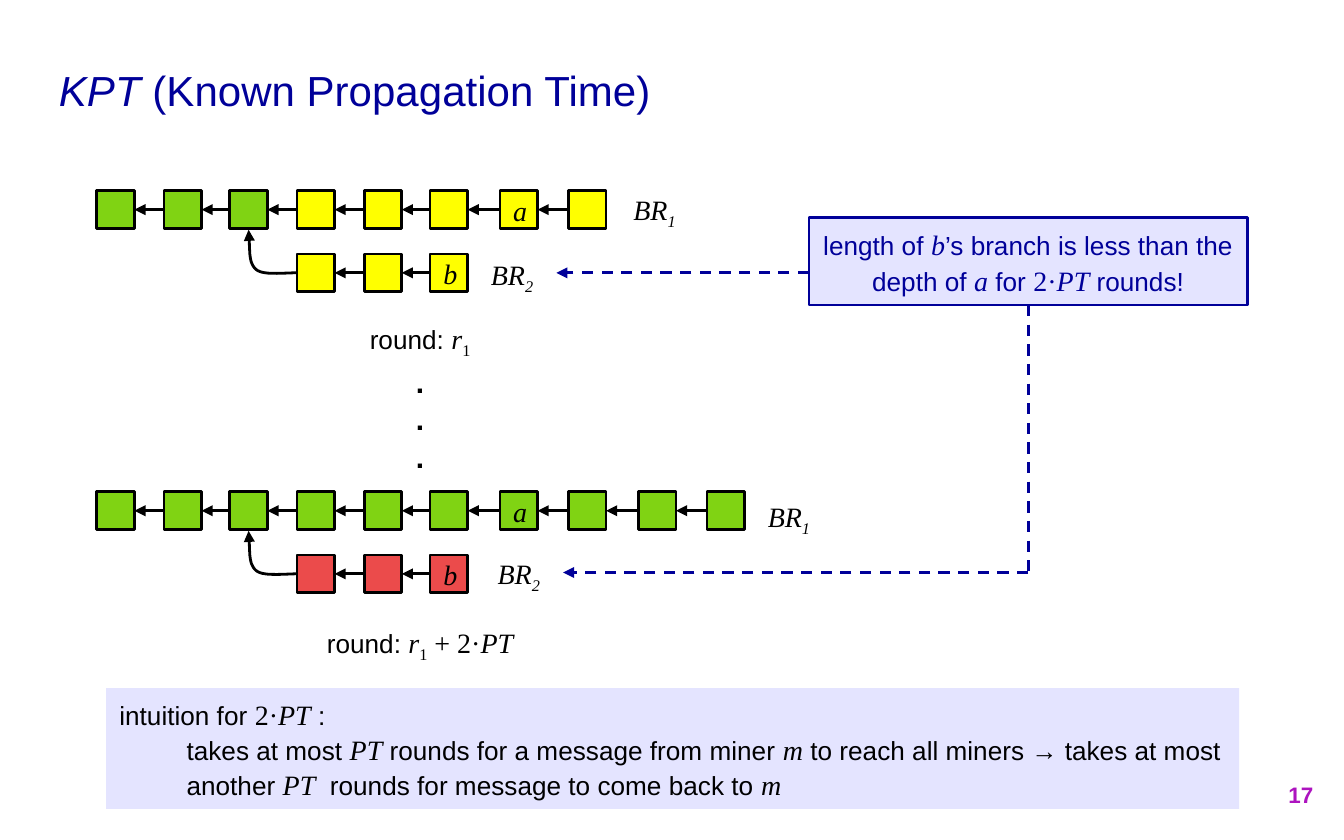
"""Build the slide on known propagation time with two stages of a forked block chain."""
from itertools import pairwise

from lxml import etree
from pptx import Presentation
from pptx.dml.color import RGBColor
from pptx.enum.dml import MSO_LINE
from pptx.enum.shapes import MSO_CONNECTOR, MSO_SHAPE
from pptx.enum.text import MSO_ANCHOR, PP_ALIGN
from pptx.oxml.ns import qn
from pptx.util import Pt

RECTANGLE, STRAIGHT, DASH = MSO_SHAPE.RECTANGLE, MSO_CONNECTOR.STRAIGHT, MSO_LINE.DASH
TOP, MIDDLE = MSO_ANCHOR.TOP, MSO_ANCHOR.MIDDLE
LEFT, CENTER, RIGHT = PP_ALIGN.LEFT, PP_ALIGN.CENTER, PP_ALIGN.RIGHT
PX = 9144

THEME = {
    "black": RGBColor.from_string("000000"),
    "navy": RGBColor.from_string("000099"),
    "purple": RGBColor.from_string("AD13BF"),
    "green": RGBColor.from_string("80D313"),
    "yellow": RGBColor.from_string("FFFF00"),
    "red": RGBColor.from_string("EB4B4B"),
    "lavender": RGBColor.from_string("E4E4FF"),
    "stroke": Pt(1.5),
    "spacing": 1.05,
    "styles": {
        "title": ("Arial", 22.5, False, False, 0),
        "title_italic": ("Arial", 22.5, True, False, 0),
        "number": ("Arial", 12, False, True, 0),
        "dot": ("Arial", 16, False, True, 0),
        "plain": ("Arial", 14, False, False, 0),
        "digit": ("Times New Roman", 15, False, False, 0),
        "math": ("Times New Roman", 15, True, False, 0),
        "digit_sub": ("Times New Roman", 15, False, False, -25000),
        "math_sub": ("Times New Roman", 15, True, False, -25000),
    },
}


def write(box, paragraphs, align=LEFT, anchor=MIDDLE, color="black"):
    """Fill a box with paragraphs, each a list of (text, style) spans."""
    frame = box.text_frame
    frame.word_wrap = True
    frame.vertical_anchor = anchor
    frame.margin_left = frame.margin_right = frame.margin_top = frame.margin_bottom = 10 * PX
    for index, spans in enumerate(paragraphs):
        para = frame.add_paragraph() if index else frame.paragraphs[0]
        para.alignment = align
        para.line_spacing = THEME["spacing"]
        for text, style in spans:
            span = para.add_run()
            span.text = text
            name, size, italic, bold, baseline = THEME["styles"][style]
            span.font.name, span.font.size = name, Pt(size)
            span.font.italic, span.font.bold = italic, bold
            span.font.color.rgb = THEME[color]
            if baseline:
                span.font._element.set("baseline", str(baseline))


def outline(shape, color="black", arrow=False, dashed=False):
    """Give a shape or connector its line, without any shadow."""
    shape.line.color.rgb = THEME[color]
    shape.line.width = THEME["stroke"]
    if dashed:
        shape.line.dash_style = DASH
    if arrow:
        etree.SubElement(shape.get_or_add_ln(), qn("a:tailEnd"), type="triangle")
    etree.SubElement(shape._element.spPr, qn("a:effectLst"))


deck = Presentation()
deck.slide_width, deck.slide_height = 1000 * PX, 625 * PX
page = deck.slides.add_slide(deck.slide_layouts[6])
shapes = page.shapes

BLOCK = 28
BLOCK_LEFTS = [72, 122, 171, 221, 271, 320, 372, 423, 475, 526]
BRANCH_LEFTS = BLOCK_LEFTS[3:6]
FORK_CURVES = [
    [(221, 203), (217, 203), (203, 204), (197, 203)],
    [(197, 203), (191, 202), (189, 200), (187, 195)],
    [(187, 195), (185, 189), (186, 175), (185, 171)],
]
CURVE_STEPS = 8
STAGES = [
    (0, ["green"] * 3 + ["yellow"] * 5, "yellow"),
    (224, ["green"] * 10, "red"),
]

for drop, main_colors, branch_color in STAGES:
    rows = [
        (142 + drop, BLOCK_LEFTS[:len(main_colors)], main_colors, 372, "a"),
        (189 + drop, BRANCH_LEFTS, [branch_color] * 3, 320, "b"),
    ]
    for top, lefts, colors, marked_left, mark in rows:
        for left, color in zip(lefts, colors):
            block = shapes.add_shape(RECTANGLE, left * PX, top * PX, BLOCK * PX, BLOCK * PX)
            block.fill.solid()
            block.fill.fore_color.rgb = THEME[color]
            outline(block)
            if left == marked_left:
                write(block, [[(mark, "math")]])
        middle = (top + BLOCK // 2) * PX
        for parent, child in pairwise(lefts):
            link = shapes.add_connector(STRAIGHT, child * PX, middle, (parent + BLOCK) * PX, middle)
            outline(link, arrow=True)

    points = []
    for curve in FORK_CURVES:
        for step in range(1, CURVE_STEPS + 1):
            t = step / CURVE_STEPS
            weights = [(1 - t) ** 3, 3 * t * (1 - t) ** 2, 3 * t ** 2 * (1 - t), t ** 3]
            x = sum(weight * point[0] for weight, point in zip(weights, curve))
            y = sum(weight * point[1] for weight, point in zip(weights, curve))
            points.append((x * PX, (y + drop) * PX))
    start_x, start_y = FORK_CURVES[0][0]
    builder = shapes.build_freeform(start_x * PX, (start_y + drop) * PX)
    builder.add_line_segments(points, close=False)
    fork = builder.convert_to_shape()
    fork.fill.background()
    outline(fork, arrow=True)

callout = shapes.add_shape(RECTANGLE, 602 * PX, 162 * PX, 326 * PX, 65 * PX)
callout.fill.solid()
callout.fill.fore_color.rgb = THEME["lavender"]
outline(callout, "navy")
write(callout, [[
    ("length of ", "plain"), ("b", "math"), ("’s branch is less than the depth of ", "plain"),
    ("a", "math"), (" for ", "plain"), ("2·", "digit"), ("PT", "math"), (" rounds!", "plain"),
]], CENTER, color="navy")

POINTERS = [
    (765, 227, 765, 426, False),
    (765, 426, 419, 426, True),
    (602, 203, 414, 203, True),
]
for from_x, from_y, to_x, to_y, arrow in POINTERS:
    pointer = shapes.add_connector(STRAIGHT, from_x * PX, from_y * PX, to_x * PX, to_y * PX)
    outline(pointer, "navy", arrow, dashed=True)

intuition = shapes.add_shape(RECTANGLE, 79 * PX, 512 * PX, 843 * PX, 90 * PX)
intuition.shadow.inherit = False
intuition.fill.solid()
intuition.fill.fore_color.rgb = THEME["lavender"]
intuition.line.fill.background()
write(intuition, [
    [("intuition for ", "plain"), ("2·", "digit"), ("PT", "math"), (" :", "plain")],
    [
        ("takes at most ", "plain"), ("PT", "math"),
        (" rounds for a message from miner ", "plain"), ("m", "math"),
        (" to reach all miners → takes at most another ", "plain"), ("PT", "math"),
        ("  rounds for message to come back to ", "plain"), ("m", "math"),
    ],
])
intuition.text_frame.paragraphs[1]._p.get_or_add_pPr().set("marL", str(50 * PX))

round_spans = [("round: ", "plain"), ("r", "math"), ("1", "digit_sub")]
first_branch = [("BR", "math"), ("1", "math_sub")]
second_branch = [("BR", "math"), ("2", "math_sub")]
LABELS = [
    (34, 31, 932, 70, [[("KPT", "title_italic"), (" (Known Propagation Time)", "title")]],
     LEFT, MIDDLE, "navy"),
    (165, 228, 295, 45, [round_spans], CENTER, TOP, "black"),
    (165, 454, 295, 45, [round_spans + [(" + 2·", "digit"), ("PT", "math")]], CENTER, TOP, "black"),
    (282, 259, 61, 101, [[(".", "dot")]] * 3, CENTER, TOP, "black"),
    (454, 132, 66, 45, [first_branch], CENTER, TOP, "black"),
    (348, 180, 66, 45, [second_branch], CENTER, TOP, "black"),
    (554, 360, 66, 45, [first_branch], CENTER, TOP, "black"),
    (353, 403, 66, 45, [second_branch], CENTER, TOP, "black"),
    (927, 567, 60, 48, [[("17", "number")]], RIGHT, MIDDLE, "purple"),
]
for left, top, width, height, paragraphs, align, anchor, color in LABELS:
    label = shapes.add_textbox(left * PX, top * PX, width * PX, height * PX)
    write(label, paragraphs, align, anchor, color)

deck.save("out.pptx")
